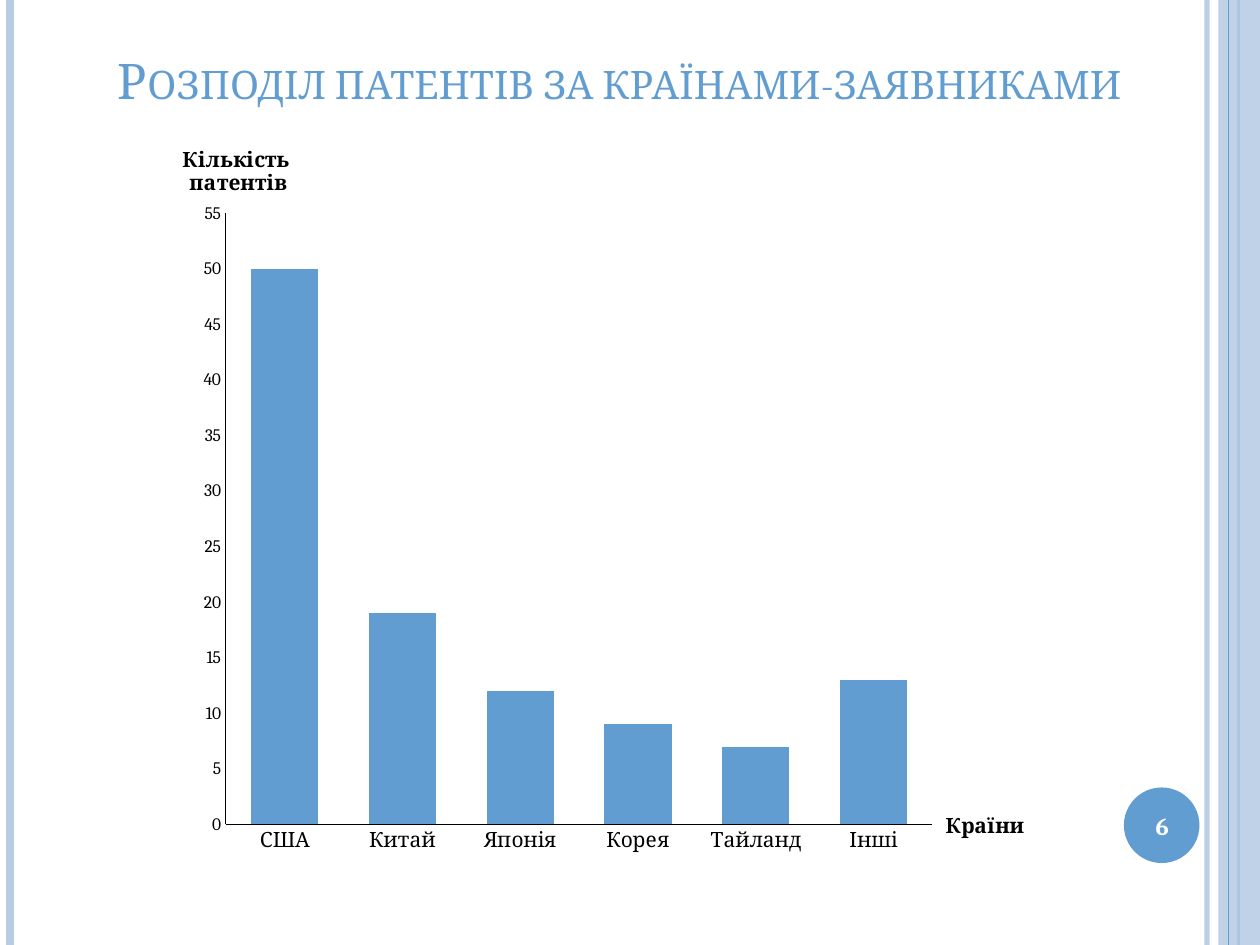
"""Build a slide with a column chart of patents by applicant country."""
from dataclasses import dataclass

from lxml import etree
from pptx import Presentation
from pptx.chart.data import CategoryChartData
from pptx.dml.color import RGBColor
from pptx.enum.chart import XL_CHART_TYPE, XL_TICK_MARK
from pptx.enum.shapes import MSO_CONNECTOR, MSO_SHAPE
from pptx.enum.text import MSO_ANCHOR, MSO_AUTO_SIZE, PP_ALIGN
from pptx.oxml.ns import qn
from pptx.util import Inches, Pt

COLUMN = XL_CHART_TYPE.COLUMN_CLUSTERED
NO_TICK = XL_TICK_MARK.NONE
STRAIGHT = MSO_CONNECTOR.STRAIGHT
RECTANGLE, OVAL = MSO_SHAPE.RECTANGLE, MSO_SHAPE.OVAL
BOTTOM, MIDDLE = MSO_ANCHOR.BOTTOM, MSO_ANCHOR.MIDDLE
NO_AUTOFIT = MSO_AUTO_SIZE.NONE
CENTER = PP_ALIGN.CENTER

WIDTH, HEIGHT = 10, 7.5


@dataclass(frozen=True)
class Theme:
    font: str = "Cambria"
    accent: RGBColor = RGBColor(0x62, 0x9D, 0xD1)
    pale: RGBColor = RGBColor(0xB7, 0xCC, 0xE5)
    black: RGBColor = RGBColor(0, 0, 0)
    white: RGBColor = RGBColor(255, 255, 255)
    title: int = 28
    number: int = 14
    label: int = 12
    tick: int = 10


THEME = Theme()


@dataclass(frozen=True)
class Stripe:
    x: float
    color: RGBColor
    weight: float
    opacity: int = 100


@dataclass(frozen=True)
class Panel:
    kind: MSO_SHAPE
    box: tuple[float, float, float, float]
    color: RGBColor
    opacity: int = 100


BACK_STRIPES = (
    Stripe(9.58, THEME.pale, 3, 93),
    Stripe(0.08, THEME.pale, 4.5),
    Stripe(9.83, THEME.accent, 1.5),
)
SIDEBAR = Panel(RECTANGLE, (9.67, 0, 0.33, HEIGHT), THEME.pale, 87)
FRONT_STRIPE = Stripe(9.75, THEME.accent, 0.75)
BADGE = Panel(OVAL, (8.92, 6.25, 0.6, 0.6), THEME.accent)

PATENTS = {"США": 50, "Китай": 19, "Японія": 12, "Корея": 9, "Тайланд": 7, "Інші": 13}


def style_font(font, size: float, color: RGBColor, bold: bool = False) -> None:
    """Apply the theme typeface with a size, colour and weight."""
    font.name, font.size, font.bold = THEME.font, Pt(size), bold
    font.color.rgb = color


def set_opacity(element, percent: int) -> None:
    """Make the first solid colour under an element translucent."""
    if percent < 100:
        color = next(element.iter(qn("a:srgbClr")))
        etree.SubElement(color, qn("a:alpha")).set("val", str(percent * 1000))


def add_stripe(s, stripe: Stripe) -> None:
    """Draw a full-height vertical line."""
    x = Inches(stripe.x)
    line = s.shapes.add_connector(STRAIGHT, x, 0, x, Inches(HEIGHT))
    line.line.color.rgb = stripe.color
    line.line.width = Pt(stripe.weight)
    props = line._element.spPr
    set_opacity(props, stripe.opacity)
    etree.SubElement(props, qn("a:effectLst"))


def add_panel(s, panel: Panel) -> None:
    """Draw a filled shape without outline."""
    sp = s.shapes.add_shape(panel.kind, *map(Inches, panel.box))
    sp.shadow.inherit = False
    sp.fill.solid()
    sp.fill.fore_color.rgb = panel.color
    sp.line.fill.background()
    set_opacity(sp._element.spPr, panel.opacity)


def set_title(s, text: str) -> None:
    """Place and format the title placeholder."""
    title = s.shapes.title
    title.left, title.top = Inches(-0.16), Inches(0.13)
    title.width, title.height = Inches(10.16), Inches(0.79)
    tf = title.text_frame
    tf.text = text
    tf.auto_size, tf.vertical_anchor = NO_AUTOFIT, BOTTOM
    p = tf.paragraphs[0]
    p.alignment = CENTER
    style_font(p.font, THEME.title, THEME.accent)
    p._p.pPr.find(qn("a:defRPr")).set("cap", "small")


def add_number(s, text: str) -> None:
    """Write the slide number over the badge."""
    box = s.shapes.add_textbox(*map(Inches, (8.89, 6.27, 0.67, 0.57)))
    tf = box.text_frame
    tf.word_wrap, tf.vertical_anchor = True, MIDDLE
    p = tf.paragraphs[0]
    p.text, p.alignment = text, CENTER
    style_font(p.font, THEME.number, THEME.white, True)


def manual_layout(**values) -> etree._Element:
    """Return a chart layout element with the given settings."""
    layout = etree.Element(qn("c:layout"))
    manual = etree.SubElement(layout, qn("c:manualLayout"))
    for tag, value in values.items():
        etree.SubElement(manual, qn(f"c:{tag}")).set("val", str(value))
    return layout


def replace_layout(parent, layout, position: int) -> None:
    """Put a layout into a chart element in place of any present one."""
    for old in parent.findall(qn("c:layout")):
        parent.remove(old)
    parent.insert(position, layout)


def style_axis(axis, text: str, size: float, x: float, y: float) -> None:
    """Format an axis and place its horizontal title."""
    axis.has_major_gridlines = False
    axis.major_tick_mark = axis.minor_tick_mark = NO_TICK
    axis.format.line.color.rgb = THEME.black
    axis.format.line.width = Pt(0.75)
    style_font(axis.tick_labels.font, size, THEME.black)
    title = axis.axis_title
    tf = title.text_frame
    tf.text = text
    tf._txBody.bodyPr.set("rot", "0")
    tf._txBody.bodyPr.set("vert", "horz")
    for p in tf.paragraphs:
        style_font(p.font, THEME.label, THEME.black, True)
    layout = manual_layout(xMode="edge", yMode="edge", x=x, y=y)
    replace_layout(title._element, layout, 1)


def add_patent_chart(s) -> None:
    """Add the column chart of patents per country."""
    data = CategoryChartData()
    data.categories = list(PATENTS)
    data.add_series("Series 1", list(PATENTS.values()))
    box = map(Inches, (0.67, 1.07, 7.49, 6.22))
    chart = s.shapes.add_chart(COLUMN, *box, data).chart
    chart.has_legend = chart.has_title = False
    style_font(chart.font, THEME.tick, THEME.black)
    plot = chart.plots[0]
    plot.gap_width, plot.overlap, plot.vary_by_categories = 75, -25, False
    fill = plot.series[0].format.fill
    fill.solid()
    fill.fore_color.rgb = THEME.accent
    style_axis(chart.category_axis, "Країни", THEME.label, 0.91, 0.86)
    axis = chart.value_axis
    style_axis(axis, "Кількість\n патентів", THEME.tick, 0.1, 0.01)
    axis.minimum_scale, axis.maximum_scale, axis.major_unit = 0, 55, 5
    layout = manual_layout(layoutTarget="inner", xMode="edge", yMode="edge",
                           x=0.15, y=0.1, w=0.75, h=0.78)
    replace_layout(chart._chartSpace.chart.plotArea, layout, 0)


def main() -> None:
    """Build and save the presentation."""
    prs = Presentation()
    prs.slide_width, prs.slide_height = Inches(WIDTH), Inches(HEIGHT)
    s = prs.slides.add_slide(prs.slide_layouts[5])
    for stripe in BACK_STRIPES:
        add_stripe(s, stripe)
    add_panel(s, SIDEBAR)
    add_stripe(s, FRONT_STRIPE)
    add_panel(s, BADGE)
    set_title(s, "Розподіл патентів за країнами-заявниками")
    add_patent_chart(s)
    add_number(s, "6")
    prs.save("out.pptx")


if __name__ == "__main__":
    main()
